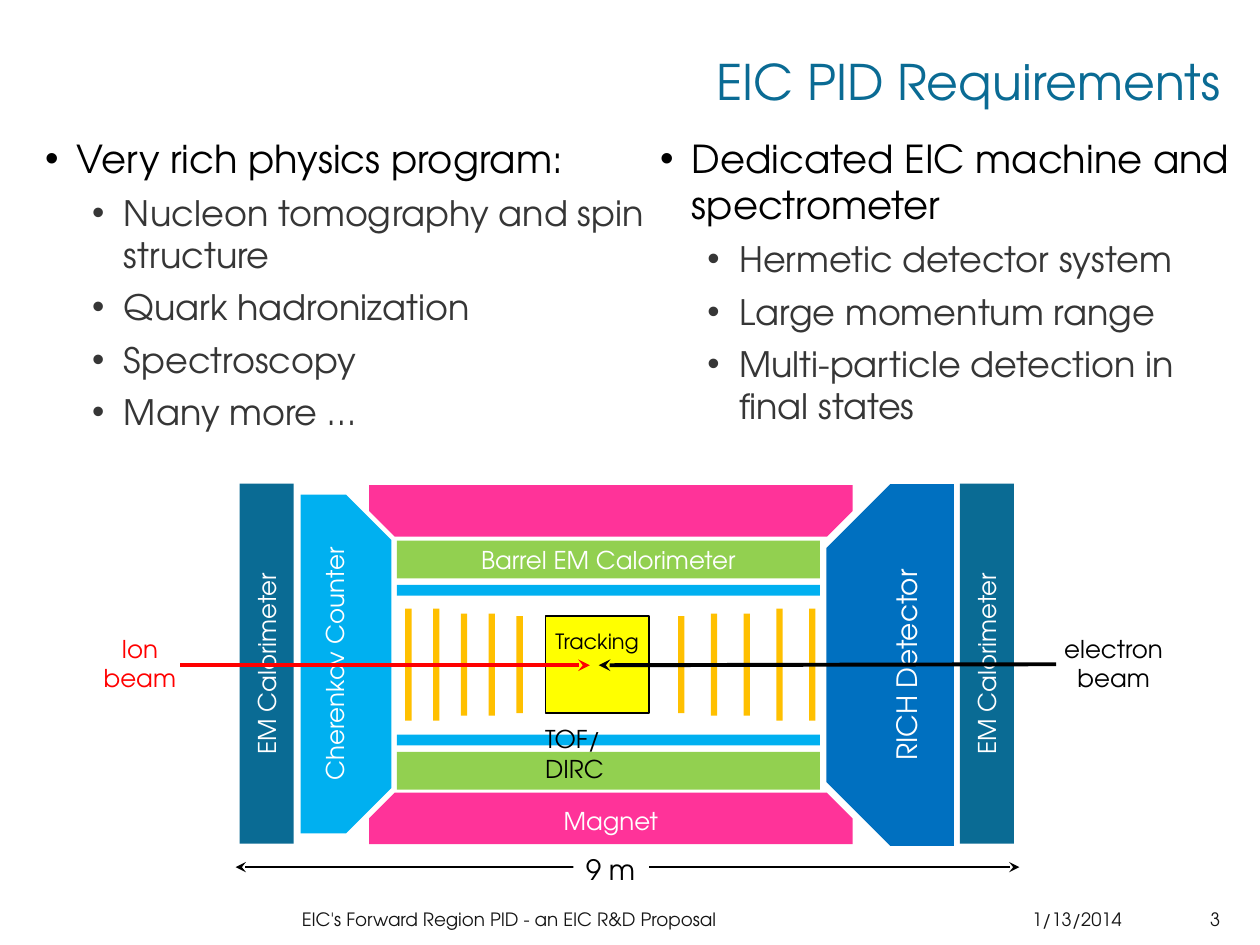
from lxml.etree import SubElement
from pptx import Presentation
from pptx.dml.color import RGBColor
from pptx.enum.shapes import MSO_CONNECTOR, MSO_SHAPE
from pptx.enum.text import MSO_ANCHOR, MSO_AUTO_SIZE, PP_ALIGN
from pptx.oxml.ns import qn
from pptx.util import Cm, Pt

FONT = "TeX Gyre Adventor"
BLACK, WHITE, GREY, RED = "000000", "FFFFFF", "161616", "FF0000"
TEAL, SKY, BLUE = "0A6B94", "00B0F0", "0070C0"
PINK, GREEN, GOLD, YELLOW = "FF3399", "92D050", "FFC000", "FFFF00"
LEFT, MID, RIGHT = PP_ALIGN.LEFT, PP_ALIGN.CENTER, PP_ALIGN.RIGHT


def rgb(code):
    return RGBColor.from_string(code)


class Deck:
    def __init__(self):
        self.file = Presentation()
        self.file.slide_width, self.file.slide_height = Cm(25.4), Cm(19.05)
        self.slide = self.file.slides.add_slide(self.file.slide_layouts[5])
        self.shapes = self.slide.shapes

    def style(self, para, size, color, align):
        para.alignment = align
        for run in para.runs:
            run.font.name, run.font.size = FONT, Pt(size)
            run.font.color.rgb = rgb(color)

    def label(self, frame, text, size, color, align, anchor):
        frame.text = text
        frame.vertical_anchor = anchor
        for para in frame.paragraphs:
            self.style(para, size, color, align)

    def title(self, text, x, y, w, h):
        box = self.shapes.title
        box.left, box.top, box.width, box.height = Cm(x), Cm(y), Cm(w), Cm(h)
        frame = box.text_frame
        frame.auto_size = MSO_AUTO_SIZE.NONE
        self.label(frame, text, 28, TEAL, RIGHT, MSO_ANCHOR.BOTTOM)
        frame.paragraphs[0].line_spacing = 0.9

    def text(self, text, x, y, w, h, size, color=BLACK, align=LEFT,
             anchor=MSO_ANCHOR.TOP, wrap=False, fill=None):
        box = self.shapes.add_textbox(Cm(x), Cm(y), Cm(w), Cm(h))
        box.text_frame.word_wrap = wrap
        if fill:
            box.fill.solid()
            box.fill.fore_color.rgb = rgb(fill)
        self.label(box.text_frame, text, size, color, align, anchor)

    def bullets(self, head, items, x, y, w, h):
        box = self.shapes.add_textbox(Cm(x), Cm(y), Cm(w), Cm(h))
        frame = box.text_frame
        frame.word_wrap = True
        frame.text = "\n".join([head] + items)
        for i, para in enumerate(frame.paragraphs):
            sub = i > 0
            props = para._p.get_or_add_pPr()
            props.set("marL", str(Cm(1.59 if sub else 0.64)))
            props.set("indent", str(-Cm(0.64)))
            SubElement(props, qn("a:buFont")).set("typeface", "Arial")
            SubElement(props, qn("a:buChar")).set("char", "•")
            if sub:
                para.level = 1
                para.space_before = Pt(6)
            self.style(para, 20 if sub else 22, "363636" if sub else BLACK, LEFT)

    def block(self, x, y, w, h, fill, text="", size=14, color=WHITE,
              kind=MSO_SHAPE.RECTANGLE, snips=(), turn=0, line=None,
              anchor=MSO_ANCHOR.MIDDLE, inset=None, upright=False):
        item = self.shapes.add_shape(kind, Cm(x), Cm(y), Cm(w), Cm(h))
        item.shadow.inherit = False
        item.rotation = turn
        for i, snip in enumerate(snips):
            item.adjustments[i] = snip
        item.fill.solid()
        item.fill.fore_color.rgb = rgb(fill)
        if line:
            item.line.color.rgb, item.line.width = rgb(line), Pt(1)
        else:
            item.line.fill.background()
        if text:
            frame = item.text_frame
            self.label(frame, text, size, color, MID, anchor)
            if inset is not None:
                frame.margin_left = frame.margin_right = frame.margin_bottom = 0
                frame.margin_top = Cm(inset)
            if upright:
                item.element.txBody.bodyPr.set("vert", "vert270")

    def snip(self, x, y, w, h, fill, text="", **more):
        self.block(x, y, w, h, fill, text, kind=MSO_SHAPE.SNIP_2_SAME_RECTANGLE, **more)

    def arrow(self, x1, y1, x2, y2, color, width, ends=("tailEnd",)):
        item = self.shapes.add_connector(
            MSO_CONNECTOR.STRAIGHT, Cm(x1), Cm(y1), Cm(x2), Cm(y2))
        item.line.color.rgb, item.line.width = rgb(color), Pt(width)
        for end in ends:
            SubElement(item.line._get_or_add_ln(), qn("a:" + end)).set("type", "stealth")
        SubElement(item.element.spPr, qn("a:effectLst"))


def main():
    deck = Deck()

    # Title and bullet columns
    deck.title("EIC PID Requirements", 5.2, 0.23, 19.66, 2.13)
    deck.bullets("Very rich physics program:",
                 ["Nucleon tomography and spin structure", "Quark hadronization",
                  "Spectroscopy", "Many more …"], 0.66, 2.59, 12.88, 15.19)
    deck.bullets("Dedicated EIC machine and spectrometer",
                 ["Hermetic detector system", "Large momentum range",
                  "Multi-particle detection in final states"], 13.06, 2.59, 12.22, 6.2)

    # Footer
    for text, x, w, align in (
            ("1/13/2014", 20.12, 3.18, MID),
            ("EIC's Forward Region PID - an EIC R&D Proposal", 0.64, 19.25, MID),
            ("3", 23.5, 1.35, RIGHT)):
        deck.text(text, x, 18.03, w, 1.02, 10.5, GREY, align, MSO_ANCHOR.MIDDLE, True)

    # Snipped detectors and magnet
    deck.snip(3.56, 12.47, 6.83, 1.83, SKY, "Cherenkov Counter", snips=(0, 0.5), turn=270)
    deck.snip(7.44, 15.98, 9.75, 1.04, PINK, "Magnet", snips=(0.5, 0),
              anchor=MSO_ANCHOR.TOP, inset=0)
    deck.snip(7.44, 9.78, 9.75, 1.04, PINK, snips=(0.5, 0), turn=180)
    deck.snip(14.3, 12.12, 7.29, 2.57, BLUE, "RICH Detector", size=16,
              snips=(0.5, 0), turn=270)

    # Calorimeters and barrel layers
    for x in (19.35, 4.83):
        deck.block(x, 9.75, 1.09, 7.26, TEAL, "EM Calorimeter", upright=True)
    for y in (11.79, 14.81):
        deck.block(8, y, 8.53, 0.22, SKY)
    for y, text in ((10.9, "Barrel EM Calorimeter"), (15.16, "")):
        deck.block(8, y, 8.53, 0.76, GREEN, text)

    # Tracking box and the planes on both sides
    deck.block(11, 12.42, 2.08, 1.96, YELLOW, "Tracking", 12, BLACK, line=BLACK,
               anchor=MSO_ANCHOR.TOP, inset=0.25)
    for start, step in ((13.67, 0.66), (10.41, -0.56)):
        for i, high in enumerate((1.96, 2.06, 2.06, 2.26, 2.26)):
            deck.block(start + i * step, 13.4 - high / 2, 0.13, high, GOLD)

    # Beams and length scale
    deck.arrow(3.63, 13.41, 11.89, 13.41, RED, 2.25)
    deck.arrow(21.29, 13.39, 12.07, 13.41, BLACK, 2.25)
    deck.arrow(4.75, 17.48, 20.55, 17.48, BLACK, 0.75, ("headEnd", "tailEnd"))

    # Labels
    deck.text("9 m", 11.56, 17.07, 1.52, 0.94, 16, fill=WHITE)
    deck.text("TOF/DIRC", 10.74, 14.48, 2.79, 0.86, 14)
    deck.text("Ion\nbeam", 1.83, 12.65, 1.98, 1.45, 14, RED, MID)
    deck.text("electron\nbeam", 21.18, 12.65, 2.54, 1.45, 14, BLACK, MID)

    deck.file.save("out.pptx")


if __name__ == "__main__":
    main()
